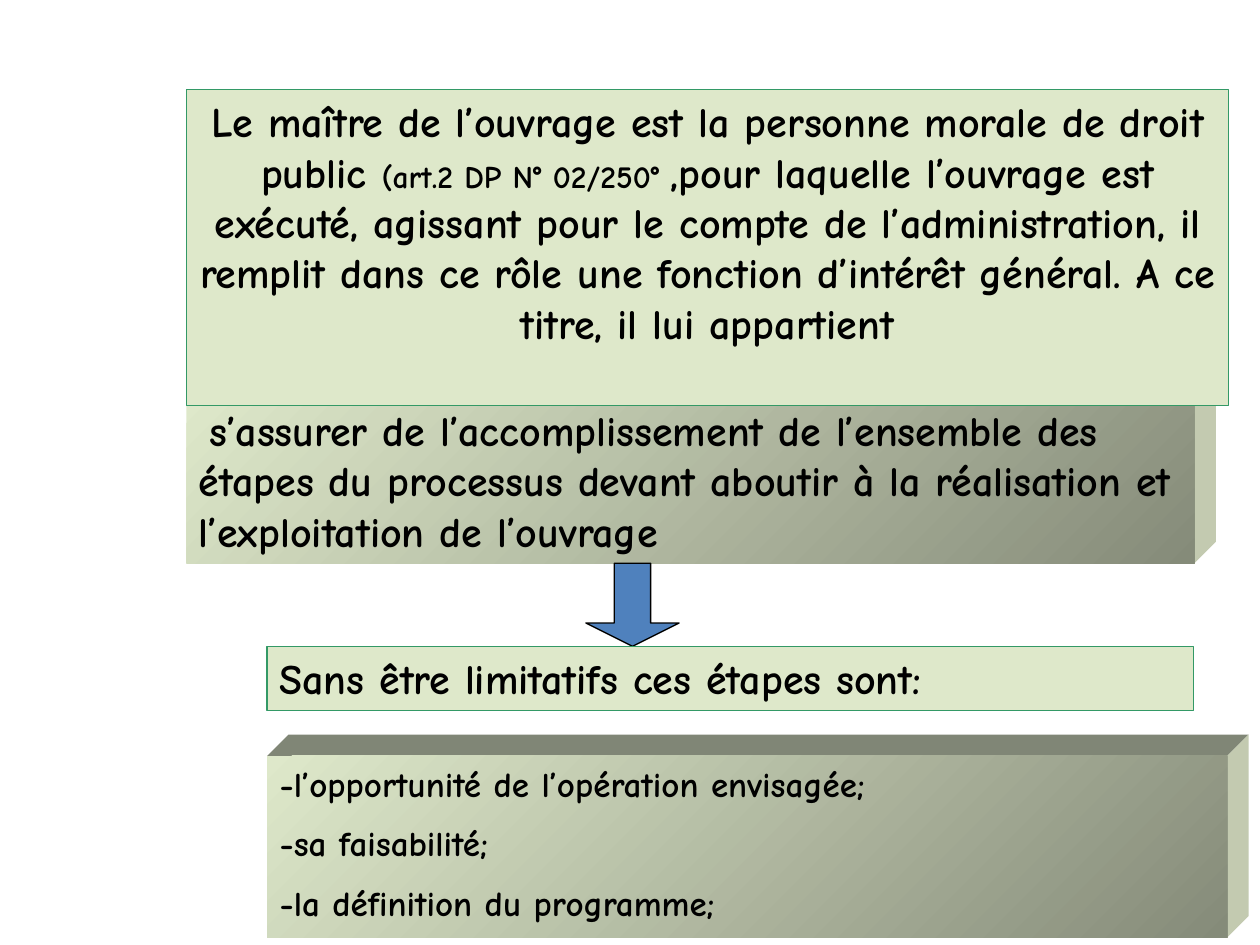
from pptx import Presentation
from pptx import util as u
from pptx.dml.color import RGBColor
from pptx.enum import shapes, text

COLUMNS, ROWS = 100, 75
PALE, EDGE, BLUE, BLACK = "DEE8CA", "339966", "4F81BD", "000000"
SHADE, SIDE, TOP = "858B79", "C3CAB0", "808676"
FONT, SPACE_FONT = "Comic Neue", "Times New Roman"
DEPTH = 1.7  # thickness of the raised panels, in grid units


def color(code):
    return RGBColor.from_string(code)


class Board:
    """Style and current slide; lengths are grid columns and rows."""

    def __init__(self, deck):
        self.page = deck.slides.add_slide(deck.slide_layouts[6])
        self.column = deck.slide_width / COLUMNS
        self.row = deck.slide_height / ROWS

    def place(self, x, y):
        return round(x * self.column), round(y * self.row)

    def paint(self, shape, fill, line=None):
        shape.shadow.inherit = False
        shape.fill.solid()
        shape.fill.fore_color.rgb = color(fill)
        if line:
            shape.line.color.rgb = color(line)
            shape.line.width = u.Pt(0.75)
        else:
            shape.line.fill.background()

    def block(self, kind, x, y, width, height, fill, line=None):
        shape = self.page.shapes.add_shape(
            kind, *self.place(x, y), *self.place(width, height))
        self.paint(shape, fill, line)
        return shape

    def panel(self, x, y, width, height, line=None):
        return self.block(shapes.MSO_SHAPE.RECTANGLE, x, y, width, height, PALE, line)

    def face(self, corners, fill):
        start, *others = [self.place(*corner) for corner in corners]
        builder = self.page.shapes.build_freeform(*start)
        builder.add_line_segments(others)
        self.paint(builder.convert_to_shape(), fill)

    def raised(self, x, y, width, height):
        right, bottom = x + width, y + height
        back, rise = right + DEPTH, y - DEPTH
        self.face([(x, y), (x + DEPTH, rise), (back, rise), (right, y)], TOP)
        self.face([(right, y), (back, rise), (back, bottom - DEPTH), (right, bottom)], SIDE)
        box = self.panel(x, y, width, height)
        box.fill.gradient()
        box.fill.gradient_angle = 315
        for stop, code in zip(box.fill.gradient_stops, (PALE, SHADE)):
            stop.color.rgb = color(code)
        return box

    def arrow(self, x, y, width, height, adjustments):
        shape = self.block(shapes.MSO_SHAPE.DOWN_ARROW, x, y, width, height, BLUE, BLACK)
        for index, value in enumerate(adjustments):
            shape.adjustments[index] = value

    def label(self, box, paragraphs, align=text.PP_ALIGN.LEFT):
        """Each paragraph is a list of (words, size, font) runs."""
        frame = box.text_frame
        frame.word_wrap = True
        frame.vertical_anchor = text.MSO_ANCHOR.TOP
        for index, runs in enumerate(paragraphs):
            para = frame.add_paragraph() if index else frame.paragraphs[0]
            para.alignment = align
            para.space_before = u.Pt(runs[0][1] / 2 if index else 0)
            for words, size, font in runs:
                span = para.add_run()
                span.text = words
                span.font.size = u.Pt(size)
                span.font.name = font
                span.font.bold = True
                span.font.color.rgb = color(BLACK)


def main():
    deck = Presentation()
    deck.slide_width, deck.slide_height = u.Inches(10), u.Inches(7.5)
    board = Board(deck)

    # Duty of the project owner, tucked under the definition
    duty = board.raised(14.8, 31.6, 80, 13.1)
    board.label(duty, [[
        (" ", 24, SPACE_FONT),
        ("s’assurer de l’accomplissement de l’ensemble des étapes du processus "
         "devant aboutir à la réalisation et l’exploitation de l’ouvrage", 24, FONT)]])

    # Definition of the project owner
    definition = board.panel(14.8, 7.1, 82.7, 25.1, EDGE)
    board.label(definition, [[
        ("Le maître de l’ouvrage est la personne morale de droit public ", 24, FONT),
        ("(art.2 DP N° 02/250° ", 18, FONT),
        (",pour laquelle l’ouvrage est exécuté, agissant pour le compte de "
         "l’administration, il remplit dans ce rôle une fonction d’intérêt général. "
         "A ce titre, il lui appartient", 24, FONT)]], text.PP_ALIGN.CENTER)

    # List of steps
    steps = board.raised(21.2, 60, 76.2, 14.4)
    board.label(steps, [[(step, 20, FONT)] for step in (
        "-l’opportunité de l’opération envisagée;",
        "-sa faisabilité;",
        "-la définition du programme;")])

    # Arrow down to the heading of the steps
    board.arrow(46.5, 44.7, 7.4, 6.6, (0.39, 0.28))
    heading = board.panel(21.2, 51.3, 73.5, 5.1, EDGE)
    board.label(heading, [[("Sans être limitatifs ces étapes sont:", 24, FONT)]])

    deck.save("out.pptx")


if __name__ == "__main__":
    main()
